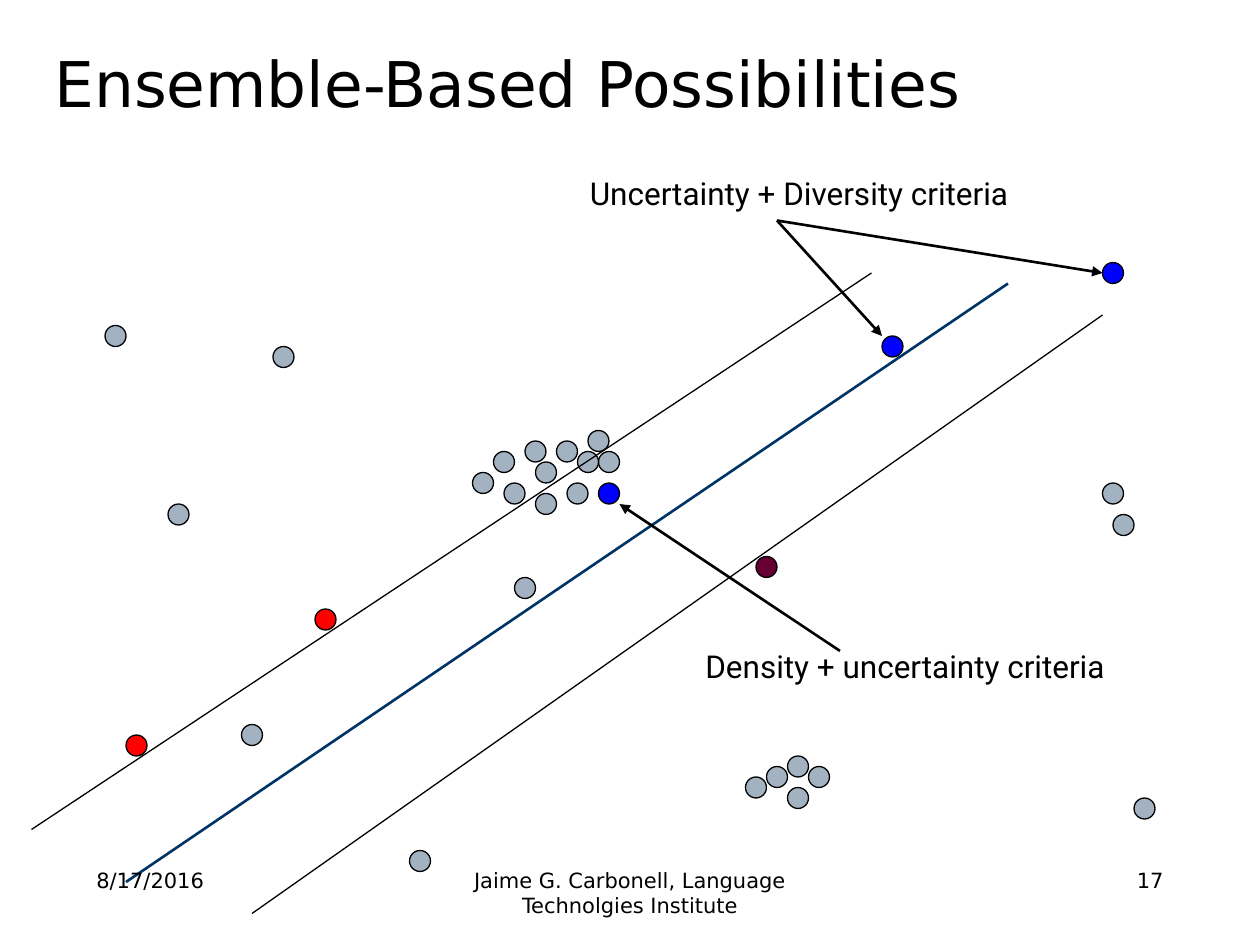
from typing import NamedTuple

from lxml.etree import SubElement
from pptx import Presentation
from pptx.dml.color import RGBColor
from pptx.enum.shapes import MSO_CONNECTOR as Connector, MSO_SHAPE as Shape
from pptx.enum.text import MSO_ANCHOR as Anchor, PP_ALIGN as Align
from pptx.oxml.ns import qn
from pptx.util import Pt

GRID = 6  # points; dots and lines snap to this grid
DOT = 12
BLACK, NAVY = "000000", "003366"
GREY, RED, BLUE, MAROON = "A3B2C1", "FF0000", "0000FF", "660033"
SANS, LABEL = "DejaVu Sans", "Roboto"


class DotGroup(NamedTuple):
    color: str
    corners: list[tuple[int, int]]  # top left, in grid units


class Line(NamedTuple):
    start: tuple[int, int]  # in grid units
    end: tuple[int, int]
    color: str = BLACK
    width: float = 0.75
    arrow: bool = False


DOTS = [
    DotGroup(GREY, [
        # scattered
        (10, 31), (26, 33), (16, 48), (49, 55), (23, 69), (39, 81),
        (105, 46), (106, 49), (108, 76),
        # dense cluster
        (51, 47), (56, 41), (48, 46), (45, 45), (51, 44), (47, 43),
        (54, 46), (57, 43), (53, 42), (50, 42), (55, 43),
        # small cluster
        (77, 73), (71, 74), (73, 73), (75, 72), (75, 75),
    ]),
    DotGroup(RED, [(30, 58), (12, 70)]),
    DotGroup(MAROON, [(72, 53)]),
    DotGroup(BLUE, [(57, 46), (84, 32), (105, 25)]),
]

LINES = [
    Line((3, 79), (83, 26)),
    Line((24, 87), (105, 30)),
    Line((12, 84), (96, 27), NAVY, 1.5),
    Line((74, 21), (84, 32), width=1.5, arrow=True),
    Line((74, 21), (105, 26), width=1.5, arrow=True),
    Line((80, 62), (59, 48), width=1.5, arrow=True),
]


def rgb(color: str) -> RGBColor:
    return RGBColor.from_string(color)


def add_dots(s, group: DotGroup) -> None:
    for x, y in group.corners:
        sp = s.shapes.add_shape(Shape.OVAL, Pt(x * GRID), Pt(y * GRID), Pt(DOT), Pt(DOT))
        sp.shadow.inherit = False
        sp.fill.solid()
        sp.fill.fore_color.rgb = rgb(group.color)
        sp.line.color.rgb = rgb(BLACK)
        sp.line.width = Pt(0.75)


def add_line(s, line: Line) -> None:
    ends = [Pt(v * GRID) for v in (*line.start, *line.end)]
    cx = s.shapes.add_connector(Connector.STRAIGHT, *ends)
    cx.line.color.rgb = rgb(line.color)
    cx.line.width = Pt(line.width)
    if line.arrow:
        SubElement(cx.line._get_or_add_ln(), qn("a:tailEnd"), type="triangle")
    SubElement(cx._element.spPr, qn("a:effectLst"))


def add_text(s, text: str, left: float, top: float, width: float, height: float, *,
             size: float = 12, font: str = SANS, align: Align = Align.LEFT,
             anchor: Anchor = Anchor.TOP, wrap: bool = True) -> None:
    tf = s.shapes.add_textbox(Pt(left), Pt(top), Pt(width), Pt(height)).text_frame
    tf.word_wrap = wrap
    tf.vertical_anchor = anchor
    p = tf.paragraphs[0]
    p.alignment = align
    r = p.add_run()
    r.text = text
    r.font.name = font
    r.font.size = Pt(size)
    r.font.color.rgb = rgb(BLACK)


def main() -> None:
    prs = Presentation()
    prs.slide_width, prs.slide_height = Pt(720), Pt(540)
    s = prs.slides.add_slide(prs.slide_layouts[6])

    add_text(s, "Ensemble-Based Possibilities", 24, 12, 648, 60, size=36, anchor=Anchor.BOTTOM)
    for group in DOTS:
        add_dots(s, group)
    for line in LINES:
        add_line(s, line)
    add_text(s, "Uncertainty + Diversity criteria", 330, 96, 318, 29, size=18, font=LABEL)
    add_text(s, "Density + uncertainty criteria", 396, 366, 247, 29, size=18, font=LABEL, wrap=False)

    add_text(s, "8/17/2016", 48, 492, 156, 37.5)
    add_text(s, "Jaime G. Carbonell, Language Technolgies Institute", 246, 492, 228, 37.5,
             align=Align.CENTER)
    add_text(s, "17", 516, 492, 156, 37.5, align=Align.RIGHT)
    prs.save("out.pptx")


if __name__ == "__main__":
    main()
